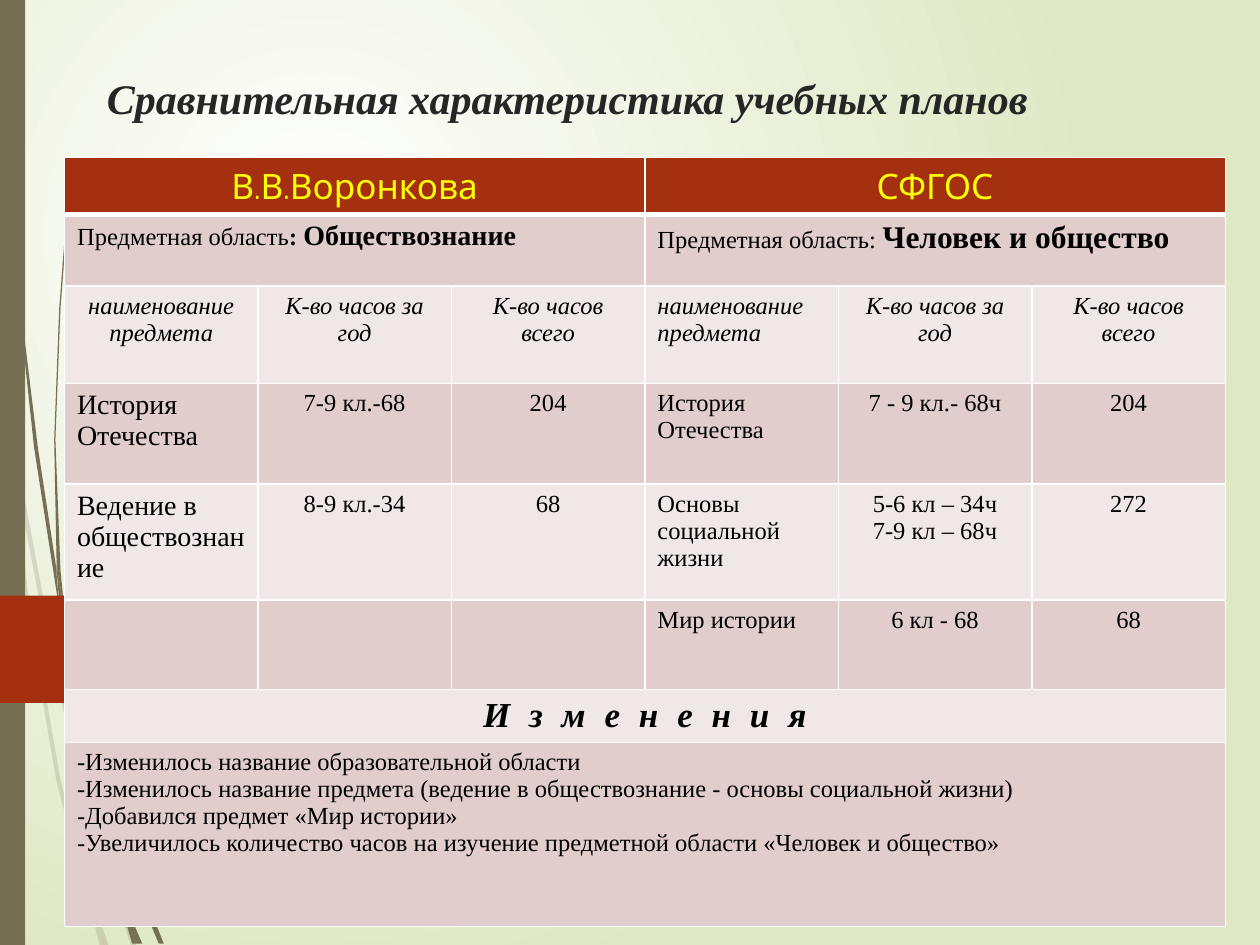
"""Build a slide comparing two school curricula in a table."""
from lxml.etree import SubElement
from pptx import Presentation
from pptx.dml.color import RGBColor
from pptx.enum.shapes import MSO_SHAPE as SHAPE
from pptx.enum.text import MSO_ANCHOR as ANCHOR, PP_ALIGN as ALIGN
from pptx.oxml import parse_xml
from pptx.oxml.ns import nsdecls, qn
from pptx.util import Cm, Pt

SERIF, SANS = "Times New Roman", "Quicksand"
OLIVE, RUST, BLACK, YELLOW = "766F54", "A53010", "000000", "FFFF00"
BANDS = ["F0E8E7", "E1CDCC"]
L, C = ALIGN.LEFT, ALIGN.CENTER


def paint(target, color, alpha=None):
    """Fill a shape or cell with a solid colour."""
    target.fill.solid()
    target.fill.fore_color.rgb = RGBColor.from_string(color)
    if alpha:
        clr = target.fill._xPr.find(qn("a:solidFill"))[0]
        SubElement(clr, qn("a:alpha")).set("val", str(alpha * 1000))


def write(p, text, color, **formats):
    """Add a run with the given font formats."""
    r = p.add_run()
    r.text = text
    r.font.color.rgb = RGBColor.from_string(color)
    for key, value in formats.items():
        setattr(r.font, key, value)
    return r


prs = Presentation()
prs.slide_width, prs.slide_height = Cm(25.4), Cm(19.05)
s = prs.slides.add_slide(prs.slide_layouts[0])
title, subtitle = s.placeholders
subtitle.element.getparent().remove(subtitle.element)

bg = parse_xml(
    f'<p:bg {nsdecls("p", "a")}><p:bgPr><a:gradFill rotWithShape="1"><a:gsLst>'
    '<a:gs pos="0"><a:srgbClr val="FFFFFF"/></a:gs>'
    '<a:gs pos="100000"><a:srgbClr val="DFE8C4"/></a:gs></a:gsLst>'
    '<a:path path="circle"><a:fillToRect l="50000" t="50000" r="100000" b="100000"/></a:path>'
    '</a:gradFill><a:effectLst/></p:bgPr></p:bg>')
s.element.cSld.insert(0, bg)

pale_wisps = [
    [(8, 350), (6, 322), (0, 282), (0, 299), (7, 344)],
    [(40, 522), (59, 599), (59, 586), (43, 520), (10, 345), (12, 376)],
    [(64, 607), (61, 596), (61, 610), (85, 694), (104, 750), (108, 750), (88, 692)],
    [(83, 750), (86, 750), (73, 711)],
    [(64, 683), (48, 619), (22, 469), (12, 376), (8, 350), (19, 470), (45, 621),
     (64, 693), (70, 714), (69, 707)],
    [(70, 714), (79, 750), (82, 750)],
    [(67, 692), (65, 683), (69, 707), (70, 714), (82, 750), (83, 750), (73, 711)],
]
dark_wisps = [
    [(5, 110), (14, 233), (27, 355), (46, 477), (47, 481), (45, 457), (45, 453),
     (30, 355), (15, 232), (6, 109), (4, 48), (3, 0), (2, 0), (3, 48)],
    [(73, 592), (88, 645), (88, 633), (88, 631), (77, 590), (50, 472), (53, 505)],
    [(94, 649), (91, 641), (91, 656), (109, 708), (126, 749), (130, 749), (113, 706)],
    [(91, 691), (81, 657), (60, 556), (53, 505), (47, 477), (56, 557), (77, 659),
     (92, 708), (97, 722), (96, 717)],
    [(50, 472), (48, 453), (44, 349), (48, 245), (52, 193), (58, 141), (51, 193),
     (47, 245), (43, 349), (45, 449), (49, 472)],
    [(110, 749), (113, 749), (100, 719)],
    [(47, 477), (53, 505), (50, 472), (49, 472), (45, 449), (45, 453)],
    [(97, 722), (105, 749), (108, 749)],
    [(96, 706), (91, 691), (96, 717), (97, 722), (108, 749), (110, 749), (100, 719)],
]
decor = []
for wisps, alpha in [(pale_wisps, 20), (dark_wisps, None)]:
    for points in wisps:
        builder = s.shapes.build_freeform(*points[0], scale=Cm(0.0254))
        builder.add_line_segments(points[1:], close=True)
        decor.append((builder.convert_to_shape(), OLIVE, alpha))
for kind, box, color in [(SHAPE.RECTANGLE, (0, 0, 0.51, 19.05), OLIVE),
                         (SHAPE.PENTAGON, (-0.08, 12.01, 3.89, 2.16), RUST)]:
    decor.append((s.shapes.add_shape(kind, *map(Cm, box)), color, None))
for sp, color, alpha in decor:
    paint(sp, color, alpha)
    sp.line.fill.background()
    sp.shadow.inherit = False

title.left, title.top, title.width, title.height = map(Cm, (1.9, 0, 21.6, 2.6))
tf = title.text_frame
tf.word_wrap, tf.vertical_anchor = True, ANCHOR.BOTTOM
p = tf.paragraphs[0]
p.alignment = L
write(p, "Сравнительная характеристика учебных планов", "262626",
      name=SERIF, size=Pt(24), bold=True, italic=True)

area = "Предметная область"
plain = {"size": Pt(14)}
large = {"size": Pt(16)}
head = {"name": SANS, "size": Pt(20), "color": YELLOW}
italic = {"size": Pt(14), "italic": True}
bold = {"size": Pt(14), "bold": True}
rows = [
    (1.07, [(3, C, [[("В.В.Воронкова", head)]]), (3, C, [[("СФГОС", head)]])]),
    (1.45, [(3, L, [[(area, plain), (": ", bold), ("Обществознание", {**bold, **large})]]),
            (3, L, [[(area + ": ", plain), ("Человек и общество", {**bold, "size": Pt(18)})]])]),
    (1.96, [(1, align, [[(text, italic)]]) for text, align in [
        ("наименование предмета", C), ("К-во часов за год", C), ("К-во часов всего", C),
        ("наименование предмета", L), ("К-во часов за год", C), ("К-во часов всего", C)]]),
    (2.03, [(1, L, [[("История Отечества", large)]]), (1, C, [[("7-9 кл.-68", plain)]]),
            (1, C, [[("204", plain)]]), (1, L, [[("История Отечества", plain)]]),
            (1, C, [[("7 - 9 кл.- 68ч", plain)]]), (1, C, [[("204", plain)]])]),
    (2.34, [(1, L, [[("Ведение в обществознание", large)]]), (1, C, [[("8-9 кл.-34", plain)]]),
            (1, C, [[("68", plain)]]), (1, L, [[("Основы социальной жизни", plain)]]),
            (1, C, [[("5-6 кл – 34ч", plain)], [("7-9 кл – 68ч", plain)]]),
            (1, C, [[("272", plain)]])]),
    (1.8, [(1, L, [])] * 3 + [(1, L, [[("Мир истории", plain)]]),
                              (1, C, [[("6 кл - 68", plain)]]), (1, C, [[("68", plain)]])]),
    (1.07, [(6, C, [[("И з м е н е н и я", {**italic, "bold": True, "size": Pt(20)})]])]),
    (3.71, [(6, L, [[(text, plain)] for text in [
        "-Изменилось название образовательной области",
        "-Изменилось название предмета (ведение в обществознание - основы социальной жизни)",
        "-Добавился предмет «Мир истории»",
        "-Увеличилось количество часов на изучение предметной области «Человек и общество»"]])]),
]
frame = s.shapes.add_table(len(rows), 6, Cm(1.3), Cm(3.18), Cm(23.4), Cm(15.43))
table = frame.table
for column in table.columns:
    column.width = Cm(3.9)

for i, (height, cells) in enumerate(rows):
    table.rows[i].height = Cm(height)
    for cell in table.rows[i].cells:
        tcPr = cell._tc.get_or_add_tcPr()
        for side in "LRTB":
            heavy = (i, side) in [(0, "B"), (1, "T")]
            ln = SubElement(tcPr, qn("a:ln" + side), w=str(Pt(3 if heavy else 1)))
            SubElement(SubElement(ln, qn("a:solidFill")), qn("a:srgbClr"), val="FFFFFF")
        paint(cell, BANDS[i % 2] if i else RUST)
    j = 0
    for span, align, paragraphs in cells:
        cell = table.cell(i, j)
        if span > 1:
            cell.merge(table.cell(i, j + span - 1))
        tf = cell.text_frame
        for k, runs in enumerate(paragraphs):
            p = tf.add_paragraph() if k else tf.paragraphs[0]
            p.alignment = align
            if i == len(rows) - 1:
                pPr = p._p.get_or_add_pPr()
                pPr.set("marL", str(Cm(0.79)))
                pPr.set("indent", str(Cm(-0.79)))
            for text, formats in runs:
                r = write(p, text, **{"color": BLACK, "name": SERIF, "bold": False, **formats})
                if span == 6 and align == C:
                    r.font._element.set("spc", "290")
        j += span

prs.save("out.pptx")
